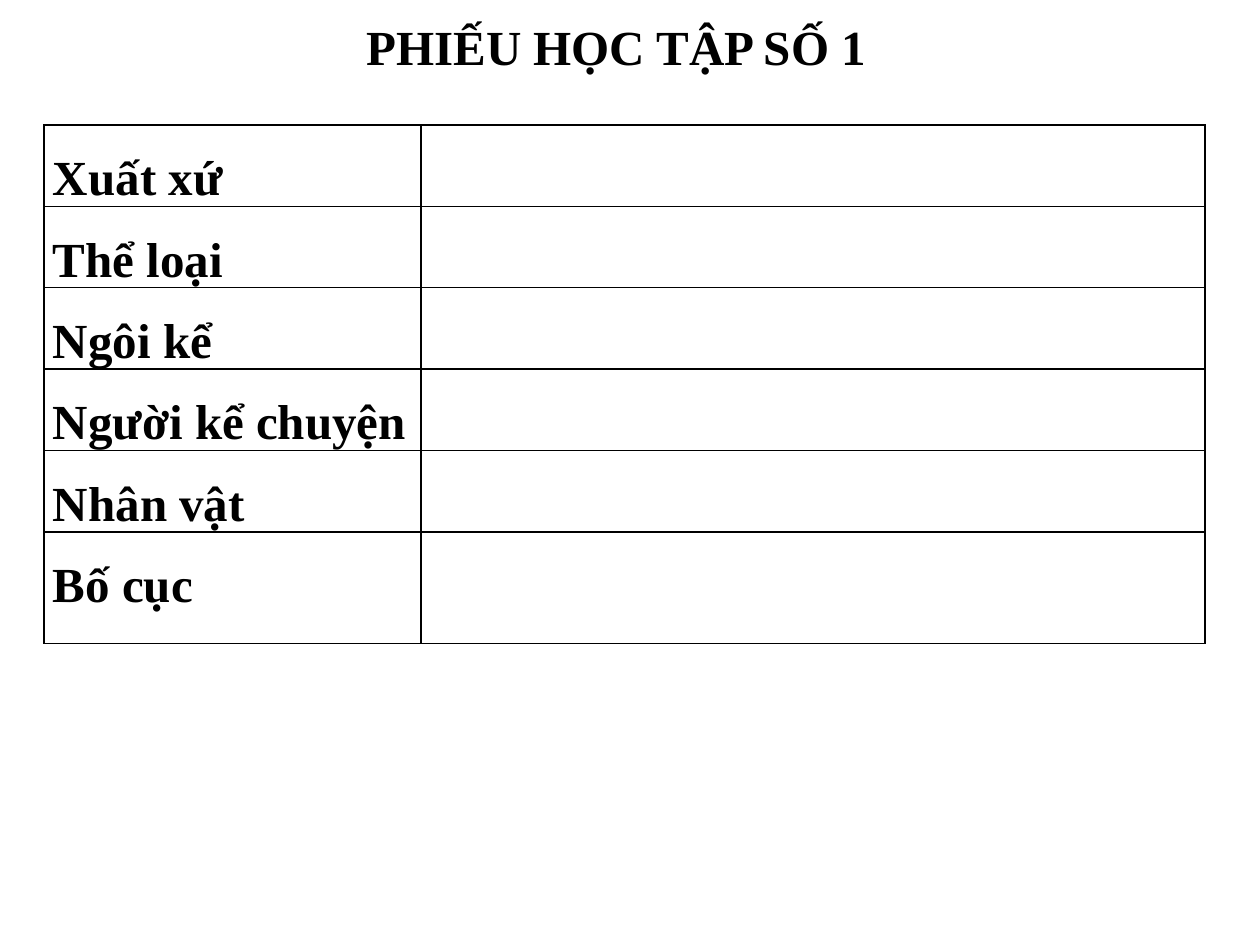
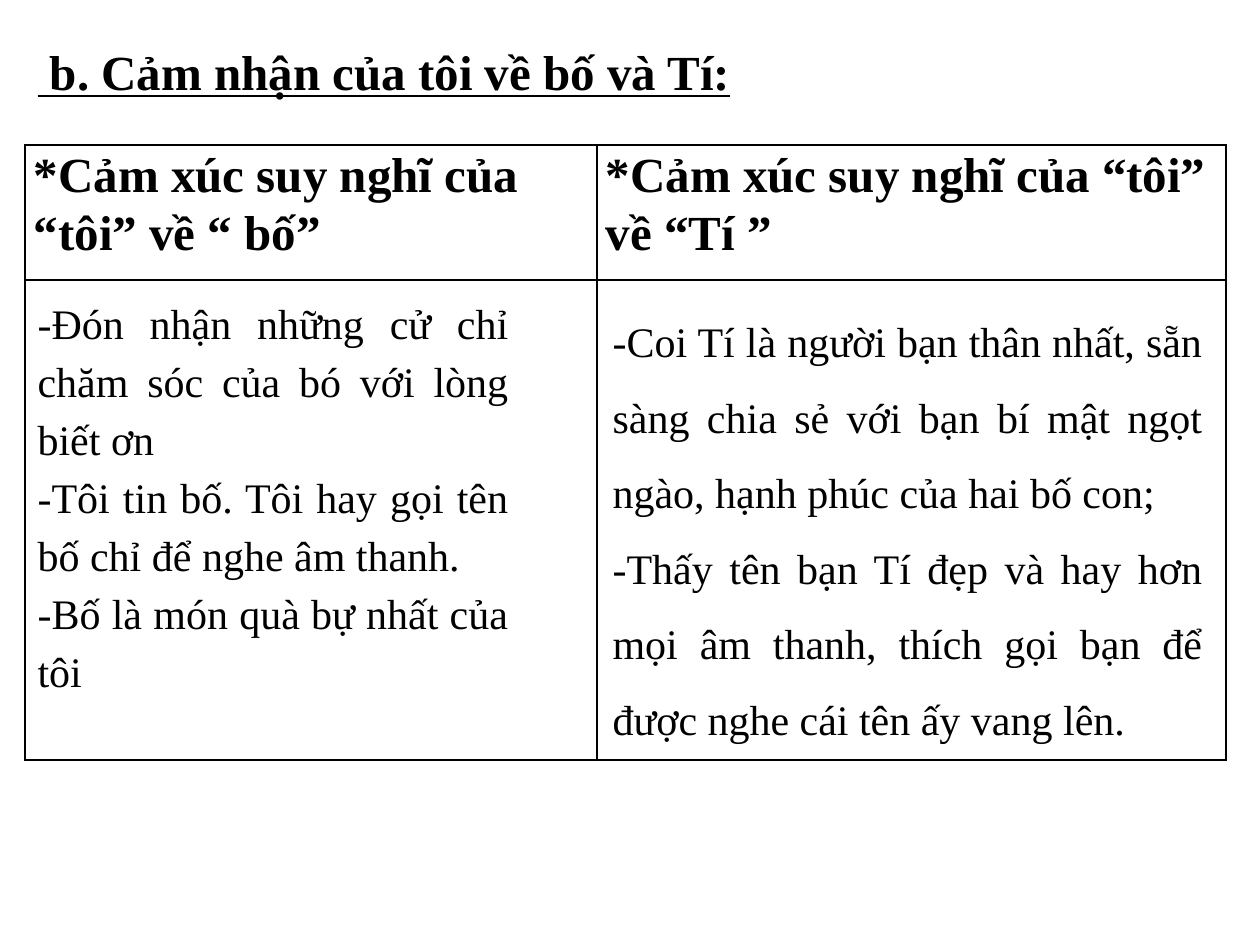
from lxml import etree
from pptx import Presentation
from pptx.dml.color import RGBColor
from pptx.enum.text import MSO_ANCHOR as Anchor, MSO_AUTO_SIZE as AutoSize, PP_ALIGN as Align
from pptx.oxml.ns import qn
from pptx.util import Pt

PX = 914400 / 126
BLACK = RGBColor(0, 0, 0)
WHITE = RGBColor(255, 255, 255)
FONT = "Times New Roman"
TITLE_TEXT = {"size": Pt(28), "bold": True, "underline": False}
BODY_TEXT = {"size": Pt(24), "bold": False}
TITLE_ONLY, TWO_CONTENT = 5, 3


def emu(px):
    return round(px * PX)


def set_attributes(target, values):
    for name, value in values.items():
        setattr(target, name, value)


class Worksheet:
    """Holds the shared style and the slide being filled."""

    def __init__(self):
        self.presentation = Presentation()
        set_attributes(self.presentation, {"slide_width": emu(1260), "slide_height": emu(945)})
        self.slide = None

    def new_slide(self, layout):
        layouts = self.presentation.slide_layouts
        self.slide = self.presentation.slides.add_slide(layouts[layout])
        for shape in list(self.slide.placeholders):
            if shape.placeholder_format.idx >= 10:
                shape.element.getparent().remove(shape.element)

    def set_text(self, frame, lines, text_format, paragraph_format):
        frame.text = "\n".join(lines)
        for paragraph in frame.paragraphs:
            set_attributes(paragraph, paragraph_format)
            for run in paragraph.runs:
                set_attributes(run.font, {"name": FONT, **text_format})
                run.font.color.rgb = BLACK

    def fill_placeholder(self, shape, box, lines, text_format, paragraph_format):
        sides = ("left", "top", "width", "height")
        set_attributes(shape, dict(zip(sides, map(emu, box))))
        frame = shape.text_frame
        set_attributes(frame, {"word_wrap": True, "auto_size": AutoSize.NONE,
                               "vertical_anchor": Anchor.TOP})
        self.set_text(frame, lines, text_format, {"space_before": Pt(0), **paragraph_format})

    def title(self, box, text, underline=False, line_spacing=1.0):
        self.fill_placeholder(self.slide.shapes.title, box, [text],
                              {**TITLE_TEXT, "underline": underline},
                              {"alignment": Align.LEFT, "line_spacing": line_spacing})

    def body(self, index, box, lines, line_spacing):
        shape = self.slide.placeholders[index]
        self.fill_placeholder(shape, box, lines, BODY_TEXT,
                              {"alignment": Align.JUSTIFY, "line_spacing": line_spacing})
        for paragraph in shape.text_frame.paragraphs:
            properties = paragraph._p.get_or_add_pPr()
            properties.set("marL", "0")
            properties.set("indent", "0")
            etree.SubElement(properties, qn("a:buNone"))

    def border(self, cell):
        properties = cell._tc.get_or_add_tcPr()
        for side in ("lnL", "lnR", "lnT", "lnB"):
            line = etree.SubElement(properties, qn(f"a:{side}"), w=str(int(Pt(1))))
            fill = etree.SubElement(line, qn("a:solidFill"))
            etree.SubElement(fill, qn("a:srgbClr"), val=str(BLACK))

    def table(self, left, top, widths, heights, rows, paragraph_format):
        box = map(emu, (left, top, sum(widths), sum(heights)))
        table = self.slide.shapes.add_table(len(heights), len(widths), *box).table
        set_attributes(table, {"first_row": False, "horz_banding": False})
        for column, width in zip(table.columns, widths):
            column.width = emu(width)
        for row, height, texts in zip(table.rows, heights, rows):
            row.height = emu(height)
            for cell, text in zip(row.cells, texts):
                set_attributes(cell, {"margin_left": emu(9), "margin_right": emu(9),
                                      "margin_top": 0, "margin_bottom": 0})
                self.border(cell)
                cell.fill.solid()
                cell.fill.fore_color.rgb = WHITE
                if text:
                    self.set_text(cell.text_frame, [text], TITLE_TEXT, paragraph_format)

    def send_table_back(self):
        """Put the newest table behind the text that lies over it."""
        tree = self.slide.shapes._spTree
        tree.insert(2, self.slide.shapes[-1].element)


def study_sheet(sheet):
    sheet.new_slide(TITLE_ONLY)
    sheet.title((354, 10, 556, 72), "PHIẾU HỌC TẬP SỐ 1")
    labels = ["Xuất xứ", "Thể loại", "Ngôi kể", "Người kể chuyện", "Nhân vật", "Bố cục"]
    sheet.table(44, 125, [377, 784], [81] * 5 + [112], [(label, "") for label in labels],
                {"alignment": Align.JUSTIFY, "line_spacing": 1.5, "space_after": Pt(10)})


def feelings(sheet):
    sheet.new_slide(TWO_CONTENT)
    sheet.title((25, 6, 883, 102), " b. Cảm nhận của tôi về bố và Tí:",
                underline=True, line_spacing=1.5)
    sheet.body(1, (25, 284, 496, 422), [
        "-Đón nhận những cử chỉ chăm sóc của bó với lòng biết ơn",
        "-Tôi tin bố. Tôi hay gọi tên bố chỉ để nghe âm thanh.",
        "-Bố là món quà bự nhất của tôi",
    ], 1.15)
    sheet.body(2, (600, 284, 615, 471), [
        "-Coi Tí là người bạn thân nhất, sẵn sàng chia sẻ với bạn bí mật ngọt ngào, "
        "hạnh phúc của hai bố con; ",
        "-Thấy tên bạn Tí đẹp và hay hơn mọi âm thanh, thích gọi bạn để được nghe "
        "cái tên ấy vang lên.",
    ], 1.5)
    headings = ("*Cảm xúc suy nghĩ của “tôi” về “ bố”", "*Cảm xúc suy nghĩ của “tôi” về “Tí ”")
    sheet.table(25, 145, [572, 629], [135, 480], [headings, ("", "")],
                {"line_spacing": 1.07, "space_after": Pt(8)})
    sheet.send_table_back()


def main():
    sheet = Worksheet()
    study_sheet(sheet)
    feelings(sheet)
    sheet.presentation.save("out.pptx")


if __name__ == "__main__":
    main()
